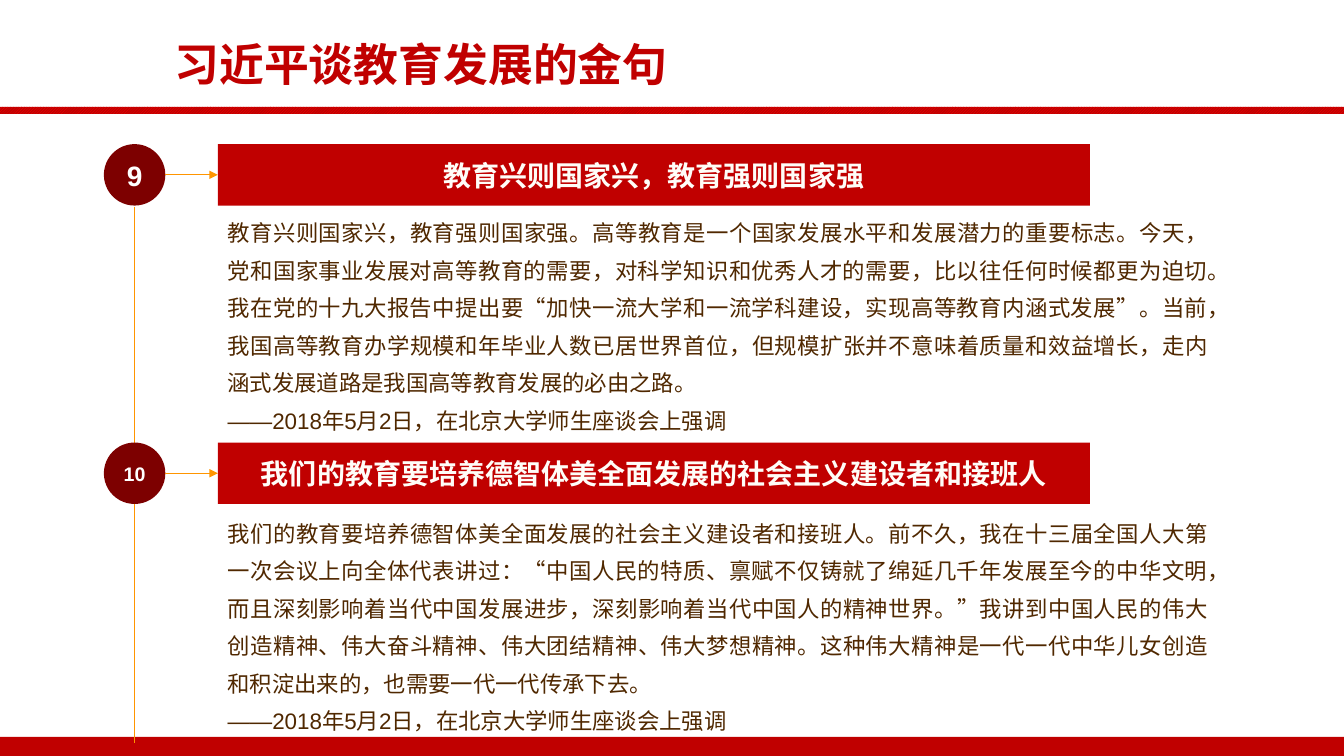
from dataclasses import dataclass

import pptx
import pptx.dml.color
import pptx.enum.dml
import pptx.enum.shapes
import pptx.enum.text
import pptx.oxml.ns
import pptx.util
from lxml import etree

Inches = pptx.util.Inches
Shape = pptx.enum.shapes.MSO_SHAPE
Align = pptx.enum.text.PP_ALIGN
Anchor = pptx.enum.text.MSO_ANCHOR
qn = pptx.oxml.ns.qn

COLORS = {
    "red": "C00000", "bright": "FF0000", "maroon": "7D0000", "orange": "FF9500",
    "brown": "502800", "white": "FFFFFF", "cream": "FFFDF8",
}
CJK_FONT = "Noto Sans CJK SC"

SLIDE_W, SLIDE_H = 13.33, 7.5
BADGE_X, BAR_X, BAR_W, BODY_W = 1.03, 2.16, 8.65, 9.93
ROW_H, BODY_H = 0.61, 2.36


@dataclass
class Quote:
    number: str
    number_size: int
    top: float
    body_top: float
    heading: str
    body: str
    citation: str


CITATION = "——2018年5月2日，在北京大学师生座谈会上强调"
QUOTES = [
    Quote("9", 20, 1.43, 2.02, "教育兴则国家兴，教育强则国家强",
          "教育兴则国家兴，教育强则国家强。高等教育是一个国家发展水平和发展潜力的重要标志。"
          "今天，党和国家事业发展对高等教育的需要，对科学知识和优秀人才的需要，比以往任何时候都更为迫切。"
          "我在党的十九大报告中提出要“加快一流大学和一流学科建设，实现高等教育内涵式发展”。"
          "当前，我国高等教育办学规模和年毕业人数已居世界首位，但规模扩张并不意味着质量和效益增长，"
          "走内涵式发展道路是我国高等教育发展的必由之路。", CITATION),
    Quote("10", 14, 4.39, 5.0, "我们的教育要培养德智体美全面发展的社会主义建设者和接班人",
          "我们的教育要培养德智体美全面发展的社会主义建设者和接班人。"
          "前不久，我在十三届全国人大第一次会议上向全体代表讲过："
          "“中国人民的特质、禀赋不仅铸就了绵延几千年发展至今的中华文明，"
          "而且深刻影响着当代中国发展进步，深刻影响着当代中国人的精神世界。”"
          "我讲到中国人民的伟大创造精神、伟大奋斗精神、伟大团结精神、伟大梦想精神。"
          "这种伟大精神是一代一代中华儿女创造和积淀出来的，也需要一代一代传承下去。", CITATION),
]


def rgb(name: str) -> pptx.dml.color.RGBColor:
    return pptx.dml.color.RGBColor.from_string(COLORS[name])


def format_text(tf, size: int, color: str, align, bold=False, font="Arial") -> None:
    for p in tf.paragraphs:
        p.alignment = align
        for r in p.runs:
            r.font.size = pptx.util.Pt(size)
            r.font.bold = bold
            r.font.name = font
            r.font.color.rgb = rgb(color)
            etree.SubElement(r.font._element, qn("a:ea"), typeface=CJK_FONT)


def add_block(s, kind, x: float, y: float, w: float, h: float, color: str):
    sp = s.shapes.add_shape(kind, Inches(x), Inches(y), Inches(w), Inches(h))
    sp.shadow.inherit = False
    sp.fill.solid()
    sp.fill.fore_color.rgb = rgb(color)
    sp.line.fill.background()
    return sp


def add_label(sp, text: str, size: int, color: str) -> None:
    tf = sp.text_frame
    tf.margin_left = tf.margin_right = 0
    tf.vertical_anchor = Anchor.MIDDLE
    tf.text = text
    format_text(tf, size, color, Align.CENTER, bold=True)


def add_line(s, x1: float, y1: float, x2: float, y2: float, arrow=False):
    line = s.shapes.add_connector(pptx.enum.shapes.MSO_CONNECTOR.STRAIGHT,
                                  Inches(x1), Inches(y1), Inches(x2), Inches(y2))
    line.line.color.rgb = rgb("orange")
    line.line.width = pptx.util.Pt(0.5)
    if arrow:
        etree.SubElement(line.line._get_or_add_ln(), qn("a:tailEnd"), type="triangle")
    etree.SubElement(line._element.spPr, qn("a:effectLst"))
    return line


def add_body(s, quote: Quote) -> None:
    sp = s.shapes.add_textbox(Inches(BAR_X), Inches(quote.body_top),
                              Inches(BODY_W), Inches(BODY_H))
    tf = sp.text_frame
    tf.word_wrap = True
    tf.text = quote.body
    tf.add_paragraph().text = quote.citation
    for p in tf.paragraphs:
        p.line_spacing = 1.4
    format_text(tf, 16, "brown", Align.JUSTIFY)


def add_heading(s, quote: Quote) -> None:
    badge = add_block(s, Shape.OVAL, BADGE_X, quote.top, ROW_H, ROW_H, "maroon")
    add_label(badge, quote.number, quote.number_size, "white")
    bar = add_block(s, Shape.RECTANGLE, BAR_X, quote.top, BAR_W, ROW_H, "red")
    add_label(bar, quote.heading, 20, "cream")
    middle = quote.top + ROW_H / 2
    arrow = add_line(s, BADGE_X + ROW_H, middle, BAR_X, middle, arrow=True)
    arrow.end_connect(bar, 1)


def add_title(s, text: str) -> None:
    title = s.shapes.title
    title.left, title.top = Inches(1.63), Inches(0.31)
    title.width, title.height = Inches(6.14), Inches(0.64)
    tf = title.text_frame
    tf.text = text
    tf.word_wrap = True
    tf.auto_size = pptx.enum.text.MSO_AUTO_SIZE.NONE
    tf.vertical_anchor = Anchor.MIDDLE
    format_text(tf, 32, "red", Align.LEFT, bold=True, font=CJK_FONT)


def main() -> None:
    prs = pptx.Presentation()
    prs.slide_width, prs.slide_height = Inches(SLIDE_W), Inches(SLIDE_H)
    s = prs.slides.add_slide(prs.slide_layouts[5])

    # Title, footer band and patterned rule
    add_title(s, "习近平谈教育发展的金句")
    add_block(s, Shape.RECTANGLE, 0, 7.31, SLIDE_W, 0.19, "red")
    rule = add_block(s, Shape.RECTANGLE, 0, 1.06, SLIDE_W, 0.07, "red")
    rule.fill.patterned()
    rule.fill.pattern = pptx.enum.dml.MSO_PATTERN.DARK_UPWARD_DIAGONAL
    rule.fill.fore_color.rgb = rgb("bright")
    rule.fill.back_color.rgb = rgb("red")

    # Quotations, with the timeline running behind the badges
    for quote in QUOTES:
        add_body(s, quote)
    add_line(s, 1.33, 2.05, 1.33, 7.37)
    for quote in QUOTES:
        add_heading(s, quote)

    prs.save("out.pptx")


if __name__ == "__main__":
    main()
